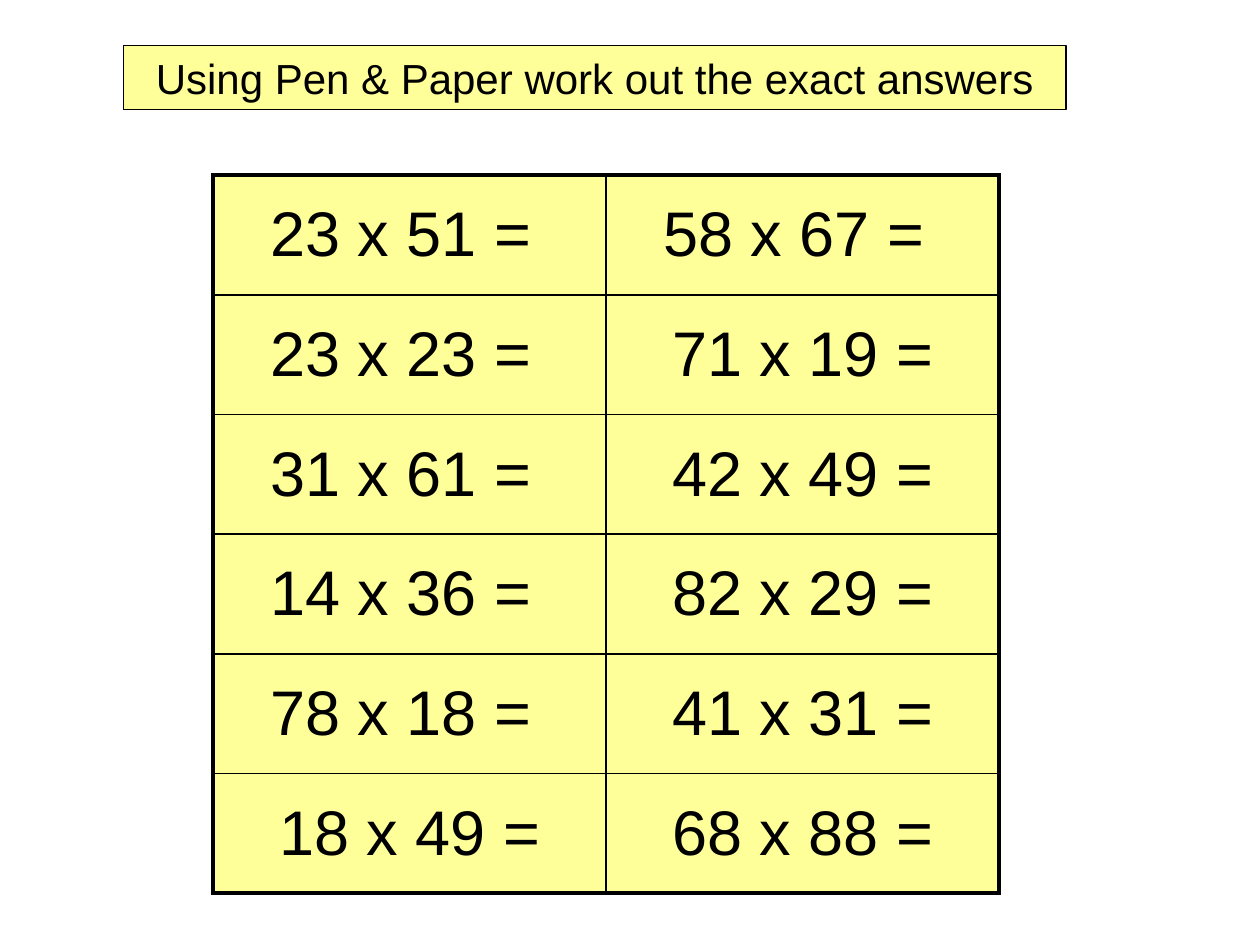
import pptx
import pptx.dml.color
import pptx.enum.shapes
import pptx.enum.text
import pptx.util
from lxml import etree
from pptx.oxml.ns import qn

Inches, Pt = pptx.util.Inches, pptx.util.Pt
RGBColor = pptx.dml.color.RGBColor

TITLE = "Using Pen & Paper work out the exact answers"
# The trailing space in some sums shifts the centred text slightly left.
SUMS = [
    ("23 x 51 = ", "58 x 67 = "),
    ("23 x 23 = ", "71 x 19 ="),
    ("31 x 61 = ", "42 x 49 ="),
    ("14 x 36 = ", "82 x 29 ="),
    ("78 x 18 = ", "41 x 31 ="),
    ("18 x 49 =", "68 x 88 ="),
]
YELLOW = RGBColor(0xFF, 0xFF, 0x99)
BLACK = RGBColor(0, 0, 0)
OUTER, INNER = 2.25, 1
COL_W, ROW_H = 3.12, 0.95


def write(tf, text, size, color=BLACK, font="Arial"):
    p = tf.paragraphs[0]
    p.alignment = pptx.enum.text.PP_ALIGN.CENTER
    r = p.add_run()
    r.text = text
    r.font.size = Pt(size)
    r.font.name = font
    r.font.color.rgb = color


def set_borders(cell, widths):
    """Draw the cell's sides; widths are points for left, right, top, bottom."""
    tc_pr = cell._tc.get_or_add_tcPr()
    for side, width in zip("LRTB", widths):
        ln = etree.SubElement(tc_pr, qn(f"a:ln{side}"), w=str(Pt(width)))
        fill = etree.SubElement(ln, qn("a:solidFill"))
        etree.SubElement(fill, qn("a:srgbClr"), val=str(BLACK))


prs = pptx.Presentation()
prs.slide_width, prs.slide_height = Inches(10), Inches(7.5)
s = prs.slides.add_slide(prs.slide_layouts[6])

title = s.shapes.add_shape(
    pptx.enum.shapes.MSO_SHAPE.RECTANGLE,
    Inches(0.98), Inches(0.36), Inches(7.48), Inches(0.51))
title.shadow.inherit = False
title.fill.solid()
title.fill.fore_color.rgb = YELLOW
title.line.color.rgb = BLACK
title.line.width = Pt(0.75)
title.text_frame.word_wrap = True
write(title.text_frame, TITLE, 24)

n_rows, n_cols = len(SUMS), len(SUMS[0])
table = s.shapes.add_table(
    n_rows, n_cols, Inches(1.69), Inches(1.39),
    Inches(COL_W * n_cols), Inches(ROW_H * n_rows)).table
table.first_row = table.horz_banding = False
for i, row in enumerate(SUMS):
    for j, text in enumerate(row):
        cell = table.cell(i, j)
        at_edge = (j == 0, j == n_cols - 1, i == 0, i == n_rows - 1)
        set_borders(cell, [OUTER if edge else INNER for edge in at_edge])
        cell.fill.solid()
        cell.fill.fore_color.rgb = YELLOW
        cell.vertical_anchor = pptx.enum.text.MSO_ANCHOR.MIDDLE
        write(cell.text_frame, text, 36)

prs.save("out.pptx")
